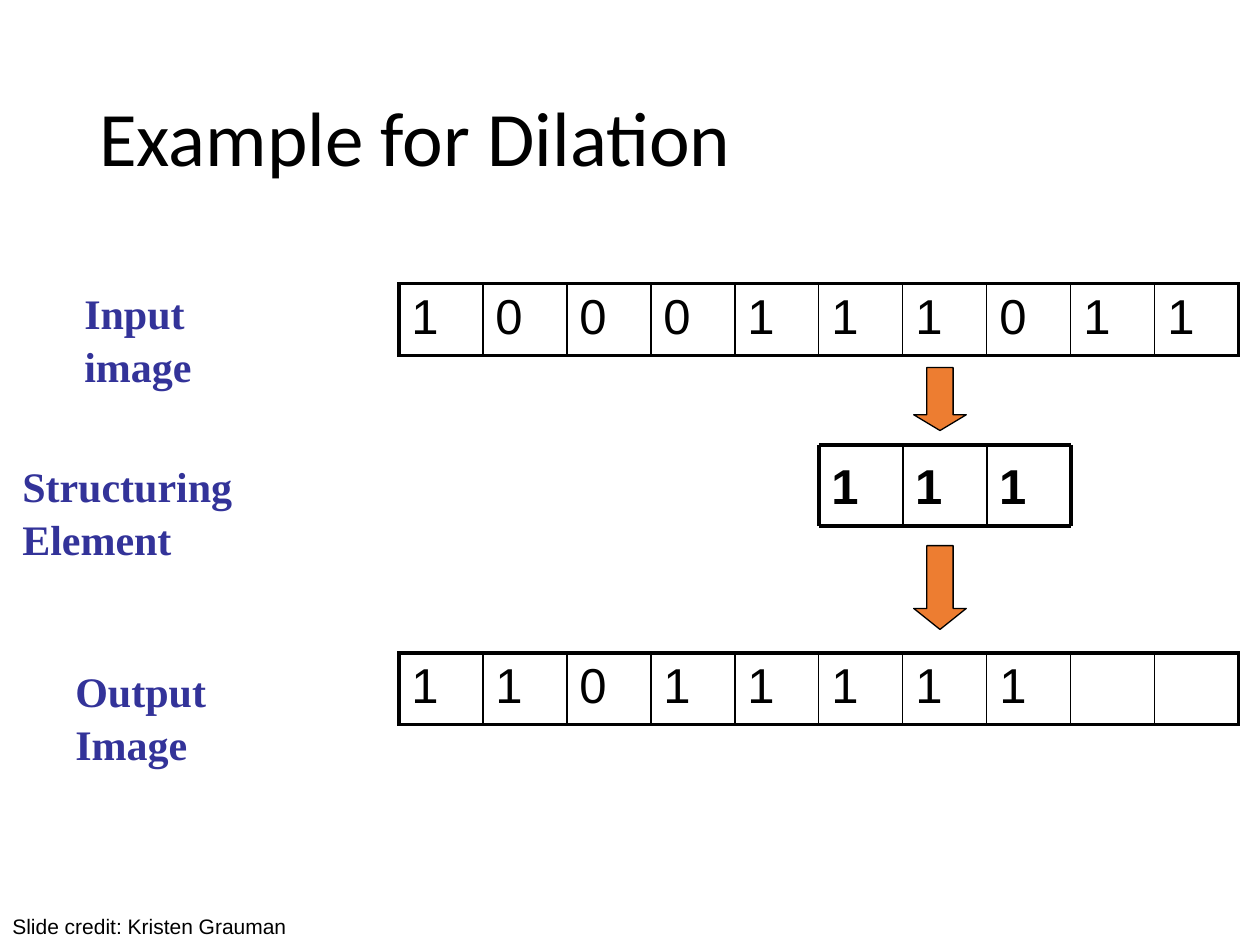
from dataclasses import dataclass

from lxml import etree
from pptx import Presentation
from pptx.dml.color import RGBColor
from pptx.enum.shapes import MSO_CONNECTOR, MSO_SHAPE
from pptx.enum.text import MSO_ANCHOR
from pptx.oxml.ns import qn
from pptx.slide import Slide
from pptx.util import Cm, Pt

STRAIGHT = MSO_CONNECTOR.STRAIGHT
DOWN_ARROW = MSO_SHAPE.DOWN_ARROW
TOP, MIDDLE = MSO_ANCHOR.TOP, MSO_ANCHOR.MIDDLE

BLACK = RGBColor(0x00, 0x00, 0x00)
INDIGO = RGBColor(0x33, 0x33, 0x99)
ORANGE = RGBColor(0xED, 0x7D, 0x31)

THICK, THIN = 2.25, 1
CELL_WIDTH = 25.4 / 15
GRID_LEFT = 8.04
ELEMENT_TOP, ELEMENT_HEIGHT = 8.97, 1.63
ELEMENT_LEFT = GRID_LEFT + 5 * CELL_WIDTH


def write_text(frame, text, font="Arial", size=28, color=BLACK, bold=False, spacing=1):
    """Fill the first paragraph of a text frame with formatted text."""
    paragraph = frame.paragraphs[0]
    paragraph.line_spacing = spacing
    run = paragraph.add_run()
    run.text = text
    run.font.name = font
    run.font.size = Pt(size)
    run.font.bold = bold
    run.font.color.rgb = color


@dataclass
class DiagramBuilder:
    """Draw styled elements on the current slide, with lengths in centimetres."""

    slide: Slide
    ink: RGBColor = BLACK
    accent: RGBColor = ORANGE

    def text(self, text, left, top, width, height, anchor=TOP, **style):
        """Add a wrapping text box."""
        box = self.slide.shapes.add_textbox(Cm(left), Cm(top), Cm(width), Cm(height))
        box.text_frame.word_wrap = True
        box.text_frame.vertical_anchor = anchor
        write_text(box.text_frame, text, **style)

    def line(self, left, top, right, bottom, weight):
        """Add a straight line without a shadow."""
        line = self.slide.shapes.add_connector(
            STRAIGHT, Cm(left), Cm(top), Cm(right), Cm(bottom))
        line.line.color.rgb = self.ink
        line.line.width = Pt(weight)
        etree.SubElement(line._element.spPr, qn("a:effectLst"))

    def arrow(self, top, height, head):
        """Add a block arrow pointing down."""
        arrow = self.slide.shapes.add_shape(
            DOWN_ARROW, Cm(18.42), Cm(top), Cm(1.06), Cm(height))
        arrow.adjustments[0] = 0.5
        arrow.adjustments[1] = head
        arrow.shadow.inherit = False
        arrow.fill.solid()
        arrow.fill.fore_color.rgb = self.accent
        arrow.line.color.rgb = self.ink
        arrow.line.width = Pt(0.75)

    def borders(self, cell, left, right):
        """Draw the four borders of a table cell."""
        properties = cell._tc.get_or_add_tcPr()
        weights = {"a:lnL": left, "a:lnR": right, "a:lnT": THICK, "a:lnB": THICK}
        for position, (tag, weight) in enumerate(weights.items()):
            border = etree.Element(qn(tag), w=str(Pt(weight)))
            fill = etree.SubElement(border, qn("a:solidFill"))
            etree.SubElement(fill, qn("a:srgbClr"), val=str(self.ink))
            properties.insert(position, border)

    def pixel_row(self, values, top):
        """Add a one-row table with a pixel value in each cell."""
        count = len(values)
        table = self.slide.shapes.add_table(
            1, count, Cm(GRID_LEFT), Cm(top), Cm(count * CELL_WIDTH), Cm(1.43)).table
        table.first_row = False
        table.horz_banding = False
        for index, value in enumerate(values):
            table.columns[index].width = Cm(CELL_WIDTH)
            cell = table.cell(0, index)
            cell.fill.background()
            self.borders(cell, THIN if index else THICK,
                         THIN if index < count - 1 else THICK)
            if value:
                write_text(cell.text_frame, value)

    def structuring_element(self, values):
        """Add the small framed mask between the two pixel rows."""
        count = len(values)
        bottom = ELEMENT_TOP + ELEMENT_HEIGHT
        right = ELEMENT_LEFT + count * CELL_WIDTH
        for index, value in enumerate(values):
            self.text(value, ELEMENT_LEFT + index * CELL_WIDTH, ELEMENT_TOP,
                      CELL_WIDTH, ELEMENT_HEIGHT, anchor=MIDDLE, bold=True)
        for edge in (ELEMENT_TOP, bottom):
            self.line(ELEMENT_LEFT, edge, right, edge, THICK)
        for index in range(count + 1):
            edge = ELEMENT_LEFT + index * CELL_WIDTH
            self.line(edge, ELEMENT_TOP, edge, bottom,
                      THICK if index in (0, count) else THIN)


def main():
    """Build and save the dilation slide."""
    presentation = Presentation()
    presentation.slide_width, presentation.slide_height = Cm(25.4), Cm(19.05)
    slide = presentation.slides.add_slide(presentation.slide_layouts[6])
    builder = DiagramBuilder(slide)

    builder.text("Example for Dilation", 1.75, 1.02, 21.9, 3.68, anchor=MIDDLE,
                 font="Calibri", size=44, spacing=0.9)
    builder.pixel_row(list("1000111011"), 5.72)
    builder.pixel_row([*"11011111", "", ""], 13.16)
    for label, left, top, width in (
        ("Input image", 1.45, 5.61, 4.57),
        ("Structuring Element", 0.2, 9.09, 7.34),
        ("Output Image", 1.27, 13.23, 5.18),
    ):
        builder.text(label, left, top, width, 1.27, font="Times New Roman",
                     size=24, color=INDIGO, bold=True, spacing=1.06)
    builder.structuring_element("111")
    builder.arrow(11, 1.69, 0.4)
    builder.arrow(7.41, 1.27, 0.3)
    builder.text("Slide credit: Kristen Grauman", 0, 18.29, 11.63, 0.76, size=12)

    presentation.save("out.pptx")


if __name__ == "__main__":
    main()
